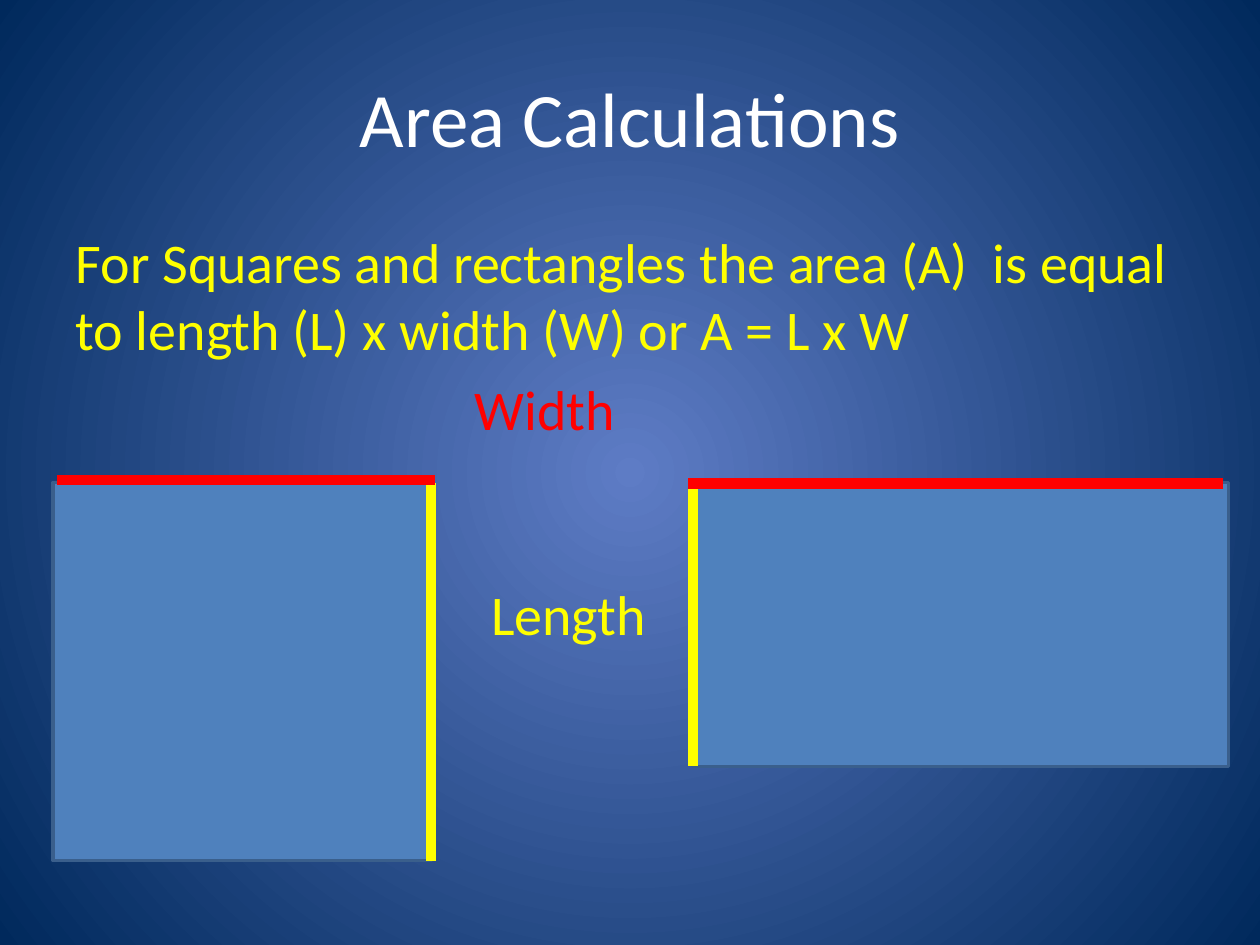
from dataclasses import dataclass

import pptx
import pptx.dml.color
import pptx.enum.shapes
import pptx.enum.text
import pptx.oxml
import pptx.oxml.ns
import pptx.util
from pptx.util import Cm

RGBColor = pptx.dml.color.RGBColor
WHITE = RGBColor(0xFF, 0xFF, 0xFF)
YELLOW = RGBColor(0xFF, 0xFF, 0x00)
RED = RGBColor(0xFF, 0x00, 0x00)
BLUE = RGBColor(0x4F, 0x81, 0xBD)
OUTLINE = RGBColor(0x3A, 0x5F, 0x8C)
GLOW = RGBColor(0x5E, 0x7C, 0xC5)
NAVY = RGBColor(0x00, 0x29, 0x5C)
FONT = "Calibri"
qn = pptx.oxml.ns.qn


@dataclass
class Box:
    left: float
    top: float
    width: float
    height: float

    def lengths(self) -> tuple:
        return Cm(self.left), Cm(self.top), Cm(self.width), Cm(self.height)


@dataclass
class Side:
    start: tuple[float, float]
    end: tuple[float, float]
    color: RGBColor


@dataclass
class Label:
    text: str
    box: Box
    color: RGBColor


SQUARE = Box(1.07, 9.73, 7.62, 7.62)
RECTANGLE = Box(13.97, 9.73, 10.8, 5.72)
SQUARE_RIGHT = SQUARE.left + SQUARE.width

LENGTH_SIDES = [
    Side((x, box.top), (x, box.top + box.height), YELLOW)
    for x, box in ((SQUARE_RIGHT, SQUARE), (RECTANGLE.left, RECTANGLE))
]
WIDTH_SIDES = [
    Side((8.76, 9.68), (1.14, 9.68), RED),
    Side((24.66, 9.75), (13.87, 9.75), RED),
]
LABELS = [
    Label("Length", Box(9.65, 11.56, 3.66, 1.63), YELLOW),
    Label("Width", Box(9.32, 7.42, 3.38, 1.63), RED),
]


def add_text(paragraph, text: str, size: int, color: RGBColor) -> None:
    run = paragraph.add_run()
    run.text = text
    run.font.name = FONT
    run.font.size = pptx.util.Pt(size)
    run.font.color.rgb = color


def fill_placeholder(shape, box: Box, text: str, size: int, color: RGBColor):
    shape.left, shape.top, shape.width, shape.height = box.lengths()
    paragraph = shape.text_frame.paragraphs[0]
    add_text(paragraph, text, size, color)
    return paragraph


def paint_background(slide) -> None:
    fill = slide.background.fill
    fill.gradient()
    for stop, color in zip(fill.gradient_stops, (GLOW, NAVY)):
        stop.color.rgb = color
    # Turn the linear gradient into one that spreads from the centre
    gradient = slide.element.find(".//" + qn("a:gradFill"))
    gradient.replace(gradient.find(qn("a:lin")), pptx.oxml.parse_xml(
        f'<a:path {pptx.oxml.ns.nsdecls("a")} path="circle">'
        '<a:fillToRect l="50000" t="50000" r="50000" b="50000"/></a:path>'))


def add_area(slide, box: Box) -> None:
    shape = slide.shapes.add_shape(
        pptx.enum.shapes.MSO_SHAPE.RECTANGLE, *box.lengths())
    shape.shadow.inherit = False
    shape.fill.solid()
    shape.fill.fore_color.rgb = BLUE
    shape.line.color.rgb = OUTLINE
    shape.line.width = pptx.util.Pt(2)


def add_side(slide, side: Side) -> None:
    connector = slide.shapes.add_connector(
        pptx.enum.shapes.MSO_CONNECTOR.STRAIGHT,
        *(Cm(value) for value in side.start + side.end))
    connector.line.color.rgb = side.color
    connector.line.width = pptx.util.Pt(6)
    properties = connector.element.spPr
    properties.append(properties.makeelement(qn("a:effectLst"), {}))


def add_label(slide, label: Label) -> None:
    frame = slide.shapes.add_textbox(*label.box.lengths()).text_frame
    frame.word_wrap = False
    frame.auto_size = pptx.enum.text.MSO_AUTO_SIZE.SHAPE_TO_FIT_TEXT
    add_text(frame.paragraphs[0], label.text, 32, label.color)


def main() -> None:
    presentation = pptx.Presentation()
    presentation.slide_width, presentation.slide_height = Cm(25.4), Cm(19.05)
    slide = presentation.slides.add_slide(presentation.slide_layouts[1])
    paint_background(slide)

    # Title and rule
    title = fill_placeholder(slide.shapes.title, Box(1.27, 0.76, 22.86, 3.18),
                             "Area Calculations", 44, WHITE)
    title.alignment = pptx.enum.text.PP_ALIGN.CENTER
    rule = fill_placeholder(
        slide.placeholders[1], Box(1.27, 4.45, 22.86, 12.57),
        "For Squares and rectangles the area (A)  is equal to "
        "length (L) x width (W) or A = L x W", 32, YELLOW)
    rule.space_before = pptx.util.Pt(6.4)
    properties = rule._p.get_or_add_pPr()
    properties.set("marL", "0")
    properties.set("indent", "0")
    properties.append(properties.makeelement(qn("a:buNone"), {}))

    # Areas, their measured sides and the labels
    for box in (SQUARE, RECTANGLE):
        add_area(slide, box)
    for side in LENGTH_SIDES + WIDTH_SIDES:
        add_side(slide, side)
    for label in LABELS:
        add_label(slide, label)

    presentation.save("out.pptx")


if __name__ == "__main__":
    main()
